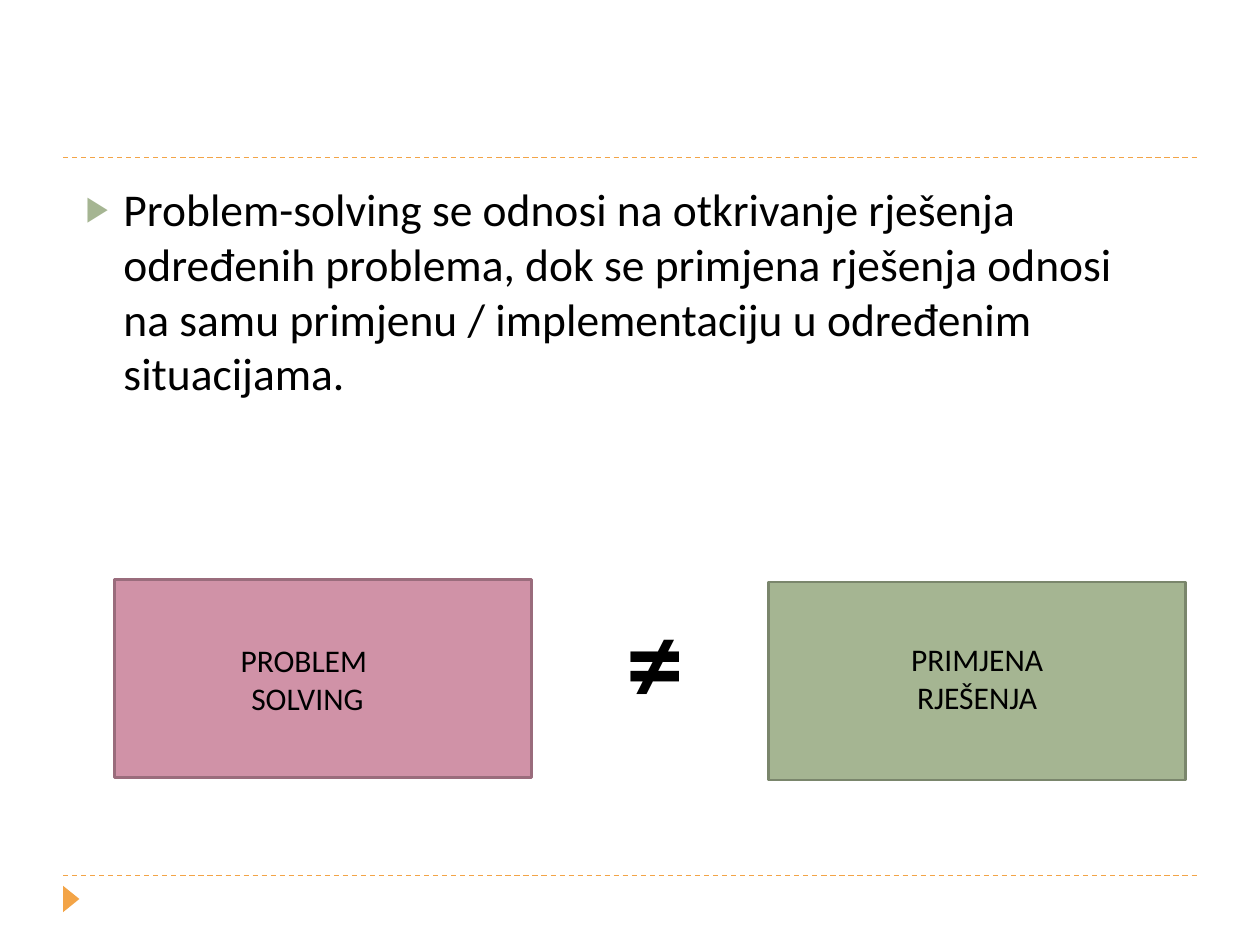
import pptx
import pptx.util
import pptx.dml.color
import pptx.enum.dml
import pptx.enum.shapes
import pptx.enum.text
import pptx.oxml
import pptx.oxml.ns
from pptx.util import Inches

RGBColor = pptx.dml.color.RGBColor
ORANGE = RGBColor(0xF3, 0xA4, 0x47)
GREEN = RGBColor(0xA5, 0xB5, 0x92)
DARK_GREEN = RGBColor(0x7A, 0x86, 0x6C)
ROSE = RGBColor(0xD0, 0x92, 0xA7)
DARK_ROSE = RGBColor(0x9A, 0x6C, 0x7C)
BLACK = RGBColor(0, 0, 0)

STATEMENT = (
    "Problem-solving se odnosi na otkrivanje rješenja određenih problema, "
    "dok se primjena rješenja odnosi na samu primjenu / implementaciju "
    "u određenim situacijama."
)
RULE_HEIGHTS = (6.95, 1.25)
CONCEPT_BOXES = [
    ((0.91, 4.6, 3.31, 1.57), ROSE, DARK_ROSE),
    ((6.1, 4.62, 3.31, 1.57), GREEN, DARK_GREEN),
]
LABELS = [
    ((4.69, 4.62, 1.02, 1.21), ["≠"], {"size": pptx.util.Pt(66), "bold": True}),
    ((1.22, 5.04, 2.44, 0.71), ["PROBLEM ", "SOLVING"], {"size": pptx.util.Pt(18)}),
    ((6.69, 5.03, 2.13, 0.71), ["PRIMJENA RJEŠENJA"], {"size": pptx.util.Pt(18)}),
]


def inches(place):
    return [Inches(length) for length in place]


def add_xml(parent, tag, content=""):
    namespace = pptx.oxml.ns.nsdecls("a")
    parent.append(pptx.oxml.parse_xml(f"<a:{tag} {namespace}>{content}</a:{tag.split()[0]}>"))


def write(paragraph, text, font_values):
    run = paragraph.add_run()
    run.text = text
    for name, value in {"name": "Calibri", **font_values}.items():
        setattr(run.font, name, value)
    run.font.color.rgb = BLACK


def add_rule(slide, height):
    rule = slide.shapes.add_connector(
        pptx.enum.shapes.MSO_CONNECTOR.STRAIGHT, *inches((0.5, height, 9.5, height)))
    rule.line.color.rgb = ORANGE
    rule.line.width = pptx.util.Pt(0.75)
    rule.line.dash_style = pptx.enum.dml.MSO_LINE.DASH
    add_xml(rule.element.spPr, "effectLst")


def add_filled(slide, kind, place, fill, outline=None):
    shape = slide.shapes.add_shape(kind, *inches(place))
    shape.shadow.inherit = False
    shape.fill.solid()
    shape.fill.fore_color.rgb = fill
    if outline is None:
        shape.line.fill.background()
    else:
        shape.line.color.rgb = outline
        shape.line.width = pptx.util.Pt(1.5)
    return shape


def place_statement(statement):
    statement.left, statement.top, statement.width, statement.height = inches(
        (0.58, 1.39, 8.71, 2.8))
    paragraph = statement.text_frame.paragraphs[0]
    write(paragraph, STATEMENT, {"size": pptx.util.Pt(26)})
    paragraph.space_before = pptx.util.Pt(6)
    properties = paragraph._p.get_or_add_pPr()
    properties.set("marL", str(Inches(0.3)))
    properties.set("indent", str(Inches(-0.3)))
    add_xml(properties, "buClr", f'<a:srgbClr val="{GREEN}"/>')
    add_xml(properties, 'buSzPct val="76000"')
    add_xml(properties, 'buChar char="▶"')


def add_label(slide, place, lines, font_values):
    frame = slide.shapes.add_textbox(*inches(place)).text_frame
    frame.word_wrap = True
    frame.auto_size = pptx.enum.text.MSO_AUTO_SIZE.SHAPE_TO_FIT_TEXT
    for number, line in enumerate(lines):
        paragraph = frame.add_paragraph() if number else frame.paragraphs[0]
        paragraph.alignment = pptx.enum.text.PP_ALIGN.CENTER
        write(paragraph, line, font_values)


def main():
    deck = pptx.Presentation()
    deck.slide_width, deck.slide_height = inches((10, 7.5))
    slide = deck.slides.add_slide(deck.slide_layouts[1])
    title = slide.shapes.title.element
    title.getparent().remove(title)
    place_statement(slide.placeholders[1])

    shapes = pptx.enum.shapes.MSO_SHAPE
    for height in RULE_HEIGHTS:
        add_rule(slide, height)
    marker = add_filled(slide, shapes.ISOSCELES_TRIANGLE, (0.46, 7.07, 0.21, 0.13), ORANGE)
    marker.rotation = 90
    for place, fill, outline in CONCEPT_BOXES:
        add_filled(slide, shapes.RECTANGLE, place, fill, outline)
    for place, lines, font_values in LABELS:
        add_label(slide, place, lines, font_values)
    deck.save("out.pptx")


if __name__ == "__main__":
    main()
